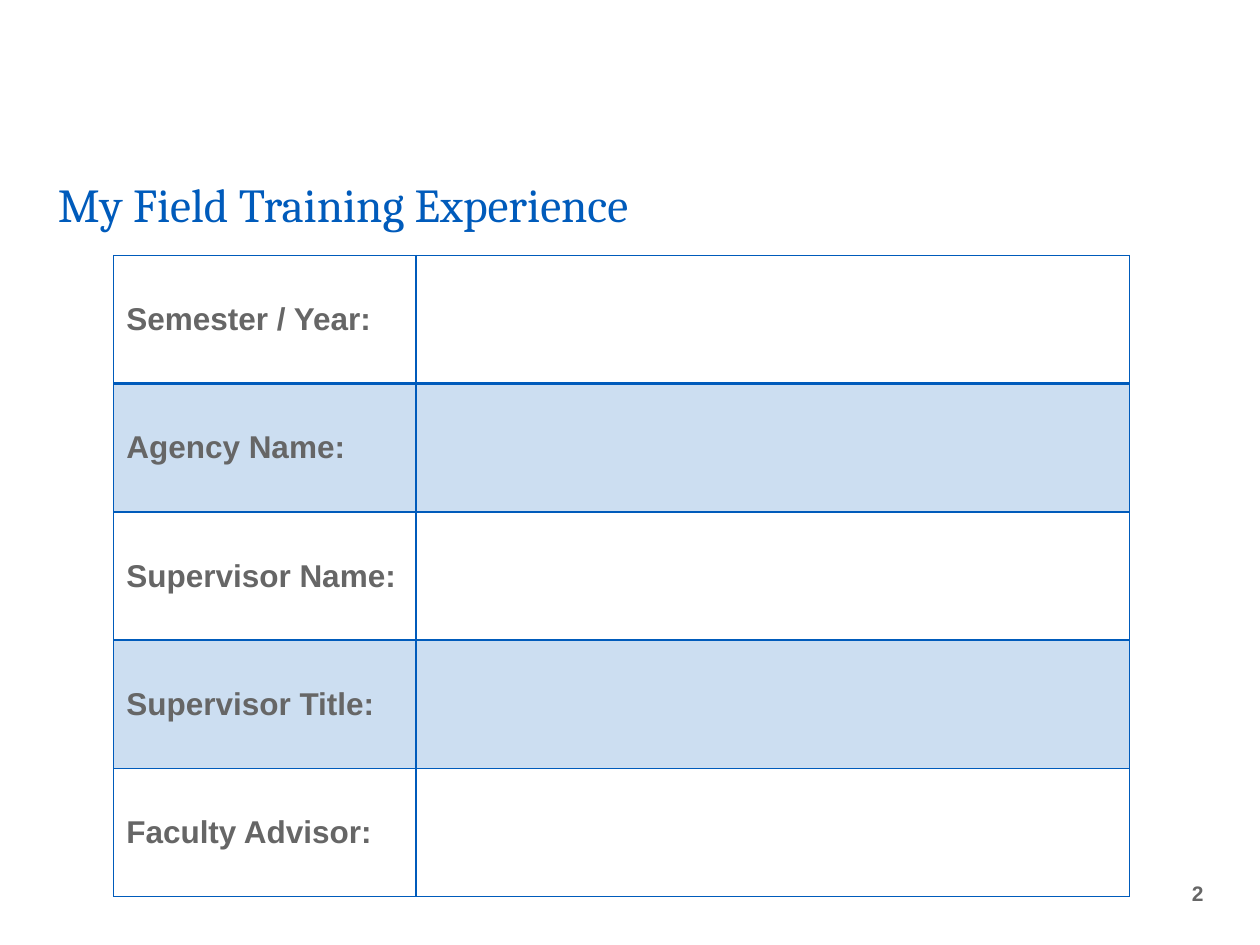
from lxml import etree
from pptx import Presentation
from pptx.dml.color import RGBColor
from pptx.enum import text
from pptx.oxml import ns
from pptx.util import Pt

COLORS = {"blue": "005BBB", "band": "CCDEF1", "gray": "666666"}
LABELS = ["Semester / Year:", "Agency Name:", "Supervisor Name:",
          "Supervisor Title:", "Faculty Advisor:"]
COL_WIDTHS = [172.8, 407.6]
ROW_HEIGHT = 73.3


def format_text(p, content, color, **formats):
    r = p.add_run()
    r.text = content
    r.font.color.rgb = RGBColor.from_string(COLORS[color])
    for name, value in formats.items():
        setattr(r.font, name, value)


def add_border(cell, side, width):
    ln = etree.SubElement(cell._tc.get_or_add_tcPr(), ns.qn(f"a:ln{side}"), w=str(Pt(width)))
    fill = etree.SubElement(ln, ns.qn("a:solidFill"))
    etree.SubElement(fill, ns.qn("a:srgbClr"), val=COLORS["blue"])


prs = Presentation()
prs.slide_width, prs.slide_height = Pt(720), Pt(540)
s = prs.slides.add_slide(prs.slide_layouts[5])

title = s.shapes.title
title.left, title.top, title.width, title.height = Pt(25.9), Pt(79.9), Pt(676.8), Pt(56.2)
tf = title.text_frame
tf.vertical_anchor = text.MSO_ANCHOR.BOTTOM
tf.auto_size = text.MSO_AUTO_SIZE.NONE
p = tf.paragraphs[0]
p.alignment = text.PP_ALIGN.LEFT
p.line_spacing = 0.8
format_text(p, "My Field Training Experience", "blue", name="Cambria", size=Pt(27))

frame = s.shapes.add_table(len(LABELS), len(COL_WIDTHS), Pt(65), Pt(146),
                           Pt(sum(COL_WIDTHS)), Pt(ROW_HEIGHT * len(LABELS)))
table = frame.table
table.first_row = table.horz_banding = False
for column, width in zip(table.columns, COL_WIDTHS):
    column.width = Pt(width)

for i, label in enumerate(LABELS):
    table.rows[i].height = Pt(ROW_HEIGHT)
    for cell in table.rows[i].cells:
        cell.vertical_anchor = text.MSO_ANCHOR.MIDDLE
        widths = {"L": 1, "R": 1, "T": 2 if i == 1 else 1, "B": 2 if i == 0 else 1}
        for side, width in widths.items():
            add_border(cell, side, width)
        if i % 2:
            cell.fill.solid()
            cell.fill.fore_color.rgb = RGBColor.from_string(COLORS["band"])
        else:
            cell.fill.background()
    format_text(table.cell(i, 0).text_frame.paragraphs[0], label, "gray",
                name="Arial", size=Pt(18), bold=True)

number = s.shapes.add_textbox(Pt(652.3), Pt(489.6), Pt(42.5), Pt(41.8))
tf = number.text_frame
tf.word_wrap = True
tf.vertical_anchor = text.MSO_ANCHOR.MIDDLE
p = tf.paragraphs[0]
p.alignment = text.PP_ALIGN.RIGHT
format_text(p, "2", "gray", name="Arial", size=Pt(12), bold=True)

prs.save("out.pptx")
